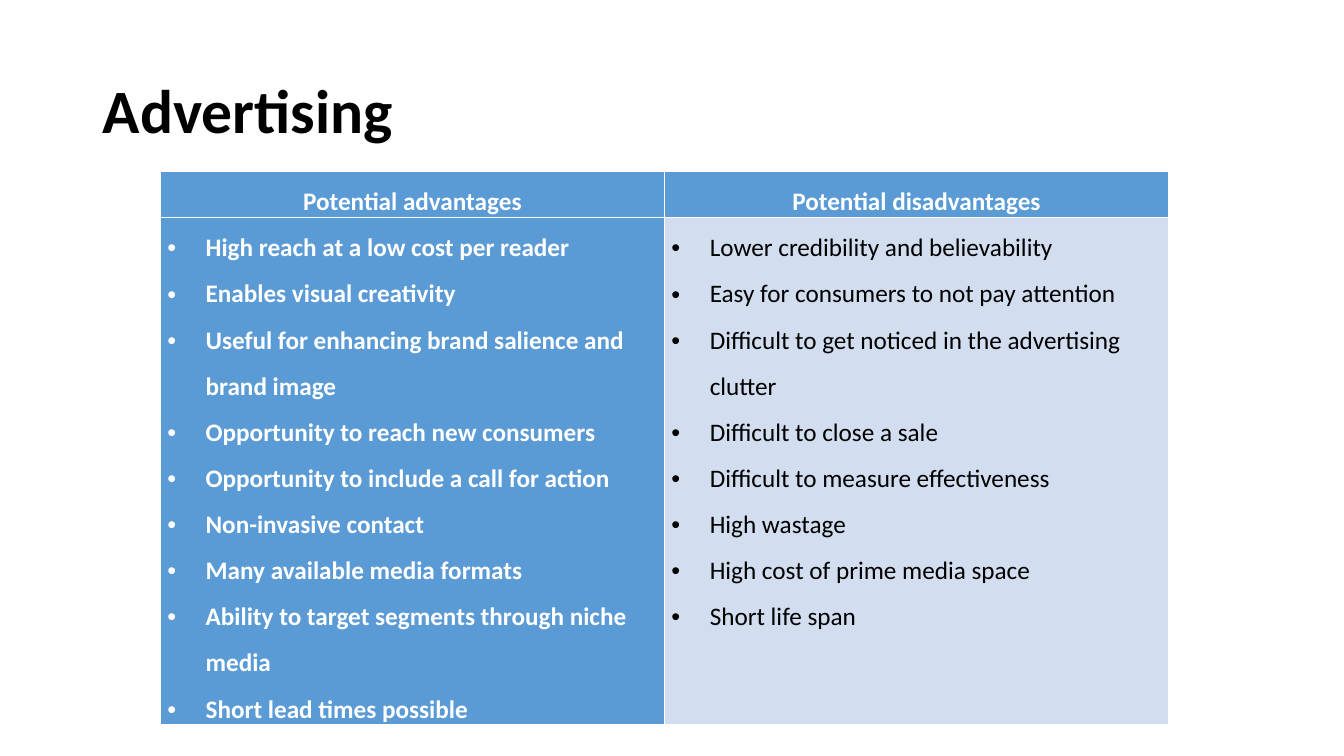
from pptx import Presentation
from pptx.dml.color import RGBColor
from pptx.enum.text import MSO_ANCHOR, PP_ALIGN
from pptx.oxml.ns import qn
from pptx.util import Inches, Pt

LEFT, CENTER = PP_ALIGN.LEFT, PP_ALIGN.CENTER
MIDDLE = MSO_ANCHOR.MIDDLE
COLORS = {"blue": "5B9BD5", "pale": "D2DEEF", "white": "FFFFFF", "black": "000000"}
FONT = "Calibri"
COL_W = 5
ROWS = [0.38, 5.03]
INDENT = Inches(0.38)

# Heading, body fill, body text colour, bold, points
COLUMNS = [
    ("Potential advantages", "blue", "white", True, [
        "High reach at a low cost per reader",
        "Enables visual creativity",
        "Useful for enhancing brand salience and brand image",
        "Opportunity to reach new consumers",
        "Opportunity to include a call for action",
        "Non-invasive contact",
        "Many available media formats",
        "Ability to target segments through niche media",
        "Short lead times possible",
    ]),
    ("Potential disadvantages", "pale", "black", False, [
        "Lower credibility and believability",
        "Easy for consumers to not pay attention",
        "Difficult to get noticed in the advertising clutter",
        "Difficult to close a sale",
        "Difficult to measure effectiveness",
        "High wastage",
        "High cost of prime media space",
        "Short life span",
    ]),
]


def style(para, size, color, bold, align, spacing):
    para.alignment, para.line_spacing = align, spacing
    font = para.font
    font.name, font.size, font.bold = FONT, Pt(size), bold
    font.color.rgb = RGBColor.from_string(COLORS[color])


def fill_cell(cell, lines, fill, color, bold, bullet):
    cell.fill.solid()
    cell.fill.fore_color.rgb = RGBColor.from_string(COLORS[fill])
    cell.margin_left = cell.margin_right = Inches(0.07)
    cell.margin_top = cell.margin_bottom = 0
    frame = cell.text_frame
    frame.text = "\n".join(lines)
    for para in frame.paragraphs:
        style(para, 18, color, bold, LEFT if bullet else CENTER, 1.5)
        if bullet:
            props = para._p.get_or_add_pPr()
            props.set("marL", str(INDENT))
            props.set("indent", str(-INDENT))
            # Bullets come before the default run properties
            mark = props.makeelement(qn("a:buChar"), {"char": "•"})
            face = props.makeelement(qn("a:buFont"), {"typeface": "Arial"})
            props.find(qn("a:defRPr")).addprevious(face)
            face.addnext(mark)


prs = Presentation()
prs.slide_width, prs.slide_height = Inches(13.33), Inches(7.5)
slide = prs.slides.add_slide(prs.slide_layouts[5])

# Title
title = slide.shapes.title
title.left, title.top = Inches(0.92), Inches(0.4)
title.width, title.height = Inches(11.5), Inches(1.45)
title.text_frame.text = "Advertising"
title.text_frame.vertical_anchor = MIDDLE
style(title.text_frame.paragraphs[0], 44, "black", True, LEFT, 0.9)

# Table: the default style draws the white rules
table = slide.shapes.add_table(
    len(ROWS), len(COLUMNS), Inches(1.59), Inches(1.7),
    Inches(COL_W * len(COLUMNS)), Inches(sum(ROWS))).table
table.first_col, table.horz_banding = True, False
for row, height in zip(table.rows, ROWS):
    row.height = Inches(height)
for i, (head, fill, color, bold, points) in enumerate(COLUMNS):
    table.columns[i].width = Inches(COL_W)
    fill_cell(table.cell(0, i), [head], "blue", "white", True, False)
    fill_cell(table.cell(1, i), points, fill, color, bold, True)

prs.save("out.pptx")
